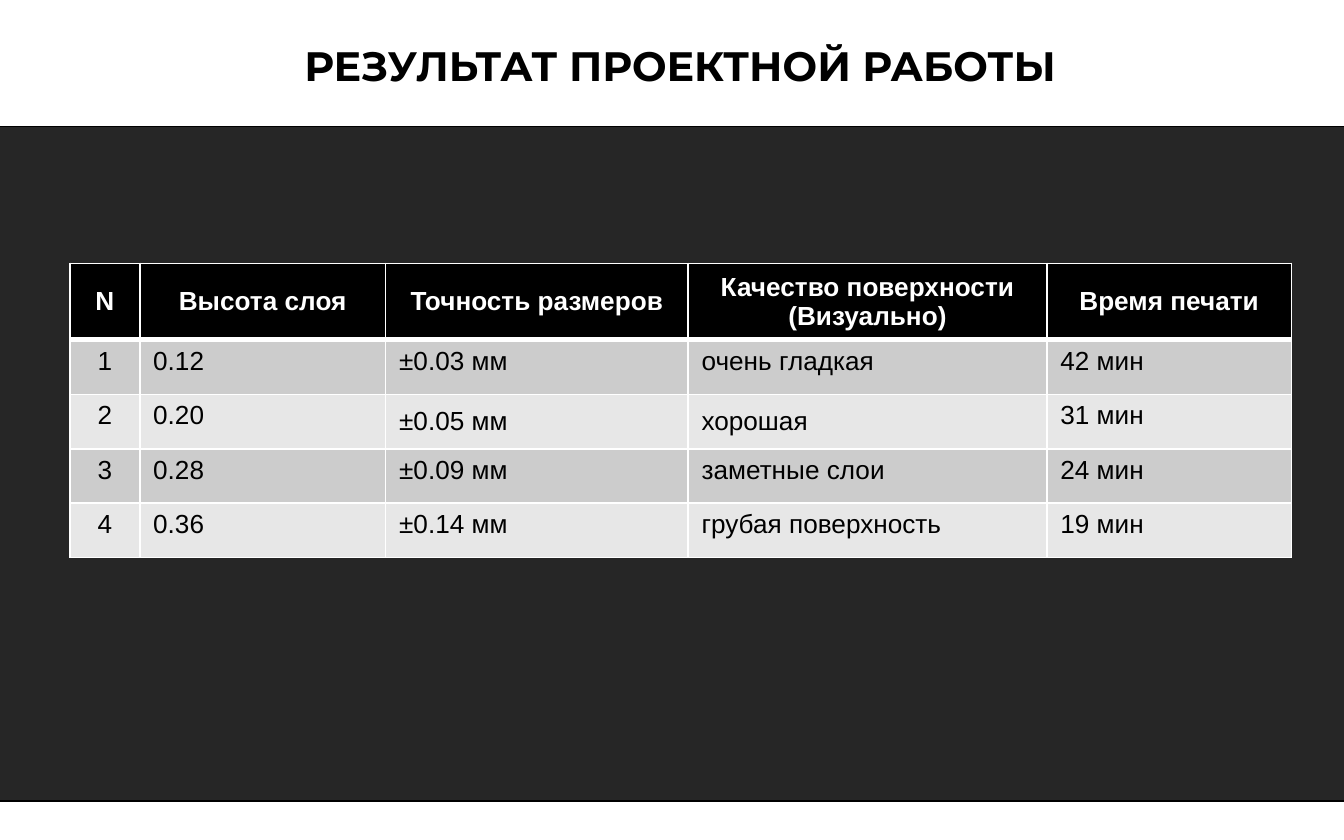
import dataclasses

import pptx
import pptx.dml.color
import pptx.enum.shapes
import pptx.enum.text
import pptx.oxml
import pptx.oxml.ns
import pptx.util

COLS, ROWS = 100, 62.5  # grid of 0.1 inch squares
ALIGN = pptx.enum.text.PP_ALIGN
ANCHOR = pptx.enum.text.MSO_ANCHOR

HEADER = ["N", "Высота слоя", "Точность размеров",
          "Качество поверхности\n(Визуально)", "Время печати"]
RESULTS = [
    ["1", "0.12", "±0.03 мм", "очень гладкая", "42 мин"],
    ["2", "0.20", "±0.05 мм", "хорошая", "31 мин"],
    ["3", "0.28", "±0.09 мм", "заметные слои", "24 мин"],
    ["4", "0.36", "±0.14 мм", "грубая поверхность", "19 мин"],
]
COLUMN_WIDTHS = [5.2, 18.3, 22.5, 26.7, 18.2]
ROW_HEIGHTS = [5.7] + [4.05] * len(RESULTS)
MIDDLE_CELLS = {(2, 2), (2, 3)}


@dataclasses.dataclass(frozen=True)
class Theme:
    ink: str = "000000"
    paper: str = "FFFFFF"
    panel: str = "262626"
    bands: tuple = ("CCCCCC", "E7E7E7")
    title_font: str = "Montserrat"
    body_font: str = "Arial"
    title_size: float = 22
    body_size: float = 14
    thin: float = 1
    thick: float = 3


def rgb(value):
    return pptx.dml.color.RGBColor.from_string(value)


class SlideBuilder:
    def __init__(self, prs, theme):
        self.theme = theme
        self.unit = prs.slide_width / COLS
        self.slide = prs.slides.add_slide(prs.slide_layouts[5])

    def grid(self, *lengths):
        return [pptx.util.Emu(round(n * self.unit)) for n in lengths]

    def style(self, p, name, size, color, bold, align):
        p.alignment = align
        p.font.name = name
        p.font.size = pptx.util.Pt(size)
        p.font.bold = bold
        p.font.color.rgb = rgb(color)

    def title(self, text, *box):
        t = self.theme
        sp = self.slide.shapes.title
        sp.left, sp.top, sp.width, sp.height = self.grid(*box)
        tf = sp.text_frame
        tf.text = text
        tf.word_wrap = True
        tf.auto_size = pptx.enum.text.MSO_AUTO_SIZE.NONE
        tf.vertical_anchor = ANCHOR.TOP
        p = tf.paragraphs[0]
        p.line_spacing = 0.9
        self.style(p, t.title_font, t.title_size, t.ink, True, ALIGN.CENTER)

    def panel(self, *box):
        sp = self.slide.shapes.add_shape(
            pptx.enum.shapes.MSO_SHAPE.RECTANGLE, *self.grid(*box))
        sp.shadow.inherit = False
        sp.fill.solid()
        sp.fill.fore_color.rgb = rgb(self.theme.panel)
        sp.line.color.rgb = rgb(self.theme.ink)
        sp.line.width = pptx.util.Pt(0.75)

    def borders(self, cell, row):
        t = self.theme
        widths = {"L": t.thin, "R": t.thin,
                  "T": t.thick if row == 1 else t.thin,
                  "B": t.thick if row == 0 else t.thin}
        tc_pr = cell._tc.get_or_add_tcPr()
        for side, width in widths.items():
            tc_pr.append(pptx.oxml.parse_xml(
                f'<a:ln{side} {pptx.oxml.ns.nsdecls("a")} w="{pptx.util.Pt(width)}">'
                f'<a:solidFill><a:srgbClr val="{t.paper}"/></a:solidFill></a:ln{side}>'))

    def cell(self, cell, text, row, col):
        t = self.theme
        head = row == 0
        self.borders(cell, row)
        cell.fill.solid()
        cell.fill.fore_color.rgb = rgb(t.ink if head else t.bands[(row - 1) % 2])
        middle = head or (row, col) in MIDDLE_CELLS
        cell.vertical_anchor = ANCHOR.MIDDLE if middle else ANCHOR.TOP
        cell.text = text
        for p in cell.text_frame.paragraphs:
            self.style(p, t.body_font, t.body_size, t.paper if head else t.ink, head,
                       ALIGN.CENTER if head or col == 0 else ALIGN.LEFT)

    def table(self, left, top, widths, heights, rows):
        box = self.grid(left, top, sum(widths), sum(heights))
        table = self.slide.shapes.add_table(len(heights), len(widths), *box).table
        for column, width in zip(table.columns, self.grid(*widths)):
            column.width = width
        for row, height in zip(table.rows, self.grid(*heights)):
            row.height = height
        for i, texts in enumerate(rows):
            for j, text in enumerate(texts):
                self.cell(table.cell(i, j), text, i, j)


def main():
    prs = pptx.Presentation()
    prs.slide_width = pptx.util.Inches(COLS / 10)
    prs.slide_height = pptx.util.Inches(ROWS / 10)
    s = SlideBuilder(prs, Theme())
    s.panel(-0.4, 9.4, 101.2, 50.2)
    s.title("РЕЗУЛЬТАТ ПРОЕКТНОЙ РАБОТЫ", 0.6, 2.9, 100, 7.1)
    s.table(5.2, 19.6, COLUMN_WIDTHS, ROW_HEIGHTS, [HEADER] + RESULTS)
    prs.save("out.pptx")


if __name__ == "__main__":
    main()
